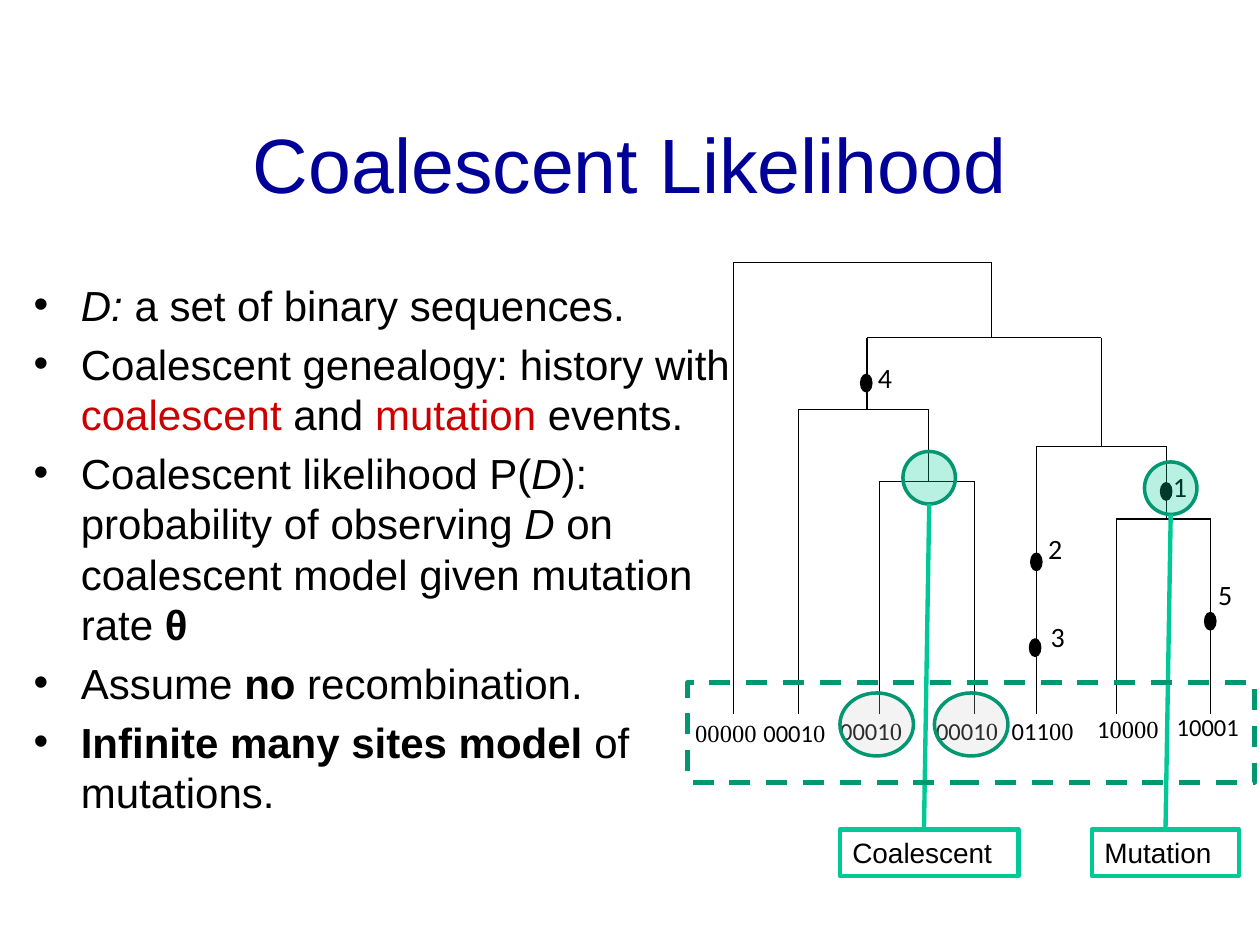
from lxml import etree
from pptx import Presentation
from pptx.dml.color import RGBColor
from pptx.enum.dml import MSO_LINE
from pptx.enum.shapes import MSO_CONNECTOR, MSO_SHAPE
from pptx.enum.text import MSO_ANCHOR, MSO_AUTO_SIZE, PP_ALIGN
from pptx.oxml.ns import qn
from pptx.util import Pt

STRAIGHT = MSO_CONNECTOR.STRAIGHT
OVAL = MSO_SHAPE.OVAL
RECTANGLE = MSO_SHAPE.RECTANGLE
DASH = MSO_LINE.DASH
TOP, MIDDLE = MSO_ANCHOR.TOP, MSO_ANCHOR.MIDDLE
LEFT, CENTER = PP_ALIGN.LEFT, PP_ALIGN.CENTER
NO_AUTOFIT = MSO_AUTO_SIZE.NONE
TOP_SITE = 0

COLORS = {
    "title": "000099",
    "ink": "000000",
    "accent": "CC0000",
    "event": "00CC99",
    "pointer": "00C896",
    "outline": "009771",
    "sample": "CCCCCC",
}

BULLETS = [
    [("D: ", "i"), ("a set of binary sequences.", "")],
    [("Coalescent genealogy: history with ", ""), ("coalescent", "accent"),
     (" and ", ""), ("mutation", "accent"), (" events.", "")],
    [("Coalescent likelihood P(", ""), ("D", "i"),
     ("): probability of observing ", ""), ("D", "i"),
     (" on coalescent model given mutation rate ", ""), ("θ", "b")],
    [("Assume ", ""), ("no", "b"), (" recombination.", "")],
    [("Infinite many sites model ", "b"), ("of mutations.", "")],
]

LEAF_Y = 258
# left x, right x, bar y, left branch end, right branch end
FORKS = [
    (29, 176.6, 0, LEAF_Y, 43),
    (105.4, 239.3, 43, 84, 105),
    (66.2, 140.6, 84, LEAF_Y, 125),
    (112.6, 167, 125, LEAF_Y, LEAF_Y),
    (202.4, 276.7, 105, LEAF_Y, 146.6),
    (248, 301.9, 146.6, LEAF_Y, LEAF_Y),
]
# label, dot centre, label corner
MUTATIONS = [
    ("4", (105, 68.9), (104.6, 52.3)),
    ("1", (276.4, 130.8), (273.1, 115)),
    ("5", (301.6, 205), (299, 176.2)),
    ("2", (202.2, 171.1), (201.8, 150.2)),
    ("3", (201.5, 220.1), (203.3, 200.6)),
]
# Calibri part, Times New Roman part, corner
SEQUENCES = [
    ("", "00000", (0.2, 256.8)),
    ("0001", "0", (39.1, 256.8)),
    ("0001", "0", (83, 255.4)),
    ("0001", "0", (137.8, 255.4)),
    ("011", "00", (181, 255.4)),
    ("1", "0000", (229.9, 254.6)),
    ("10001", "", (275.3, 253.2)),
]


def rgb(name):
    return RGBColor.from_string(COLORS[name])


def add_run(paragraph, text, size, font="Arial", color="ink"):
    run = paragraph.add_run()
    run.text = text
    run.font.size = Pt(size)
    run.font.name = font
    run.font.color.rgb = rgb(color)
    return run


def add_line(shapes, start, end, color="ink", width=0.75):
    line = shapes.add_connector(STRAIGHT, *map(Pt, start + end))
    line.line.color.rgb = rgb(color)
    line.line.width = Pt(width)
    etree.SubElement(line._element.spPr, qn("a:effectLst"))
    return line


def add_outline(shapes, kind, box, color, width, fill=None, opacity=100):
    shape = shapes.add_shape(kind, *map(Pt, box))
    shape.shadow.inherit = False
    shape.line.color.rgb = rgb(color)
    shape.line.width = Pt(width)
    if fill is None:
        shape.fill.background()
    else:
        shape.fill.solid()
        shape.fill.fore_color.rgb = rgb(fill)
        if opacity < 100:
            hue = shape._element.spPr.find(".//" + qn("a:solidFill"))[0]
            etree.SubElement(hue, qn("a:alpha"), val=str(opacity * 1000))
    return shape


def add_label(shapes, corner, size, runs):
    label = shapes.add_textbox(*map(Pt, corner + (54, 40)))
    label.text_frame.word_wrap = True
    paragraph = label.text_frame.paragraphs[0]
    paragraph.space_after = Pt(10)
    for text, font in runs:
        if text:
            add_run(paragraph, text, size, font)


def place(placeholder, box):
    placeholder.left, placeholder.top, placeholder.width, placeholder.height = map(Pt, box)
    placeholder.text_frame.auto_size = NO_AUTOFIT


def fill_title(title, box):
    place(title, box)
    title.text_frame.vertical_anchor = MIDDLE
    paragraph = title.text_frame.paragraphs[0]
    paragraph.alignment = CENTER
    add_run(paragraph, "Coalescent Likelihood", 44, color="title")


def fill_body(body, box):
    place(body, box)
    frame = body.text_frame
    for index, runs in enumerate(BULLETS):
        paragraph = frame.add_paragraph() if index else frame.paragraphs[0]
        for text, style in runs:
            run = add_run(paragraph, text, 24, color="accent" if style == "accent" else "ink")
            if style == "i":
                run.font.italic = True
            elif style == "b":
                run.font.bold = True


def draw_genealogy(slide, left, top):
    shapes = slide.shapes.add_group_shape().shapes

    def at(x, y):
        return left + x, top + y

    for corner_x, far_x, bar_y, corner_end, far_end in FORKS:
        add_line(shapes, at(corner_x, bar_y), at(far_x, bar_y))
        add_line(shapes, at(corner_x, bar_y), at(corner_x, corner_end))
        add_line(shapes, at(far_x, bar_y), at(far_x, far_end))
    for calibri, times, corner in SEQUENCES:
        add_label(shapes, at(*corner), 14, [(calibri, "Calibri"), (times, "Times New Roman")])
    dot_width, dot_height = 6.5, 10
    for number, (x, y), corner in MUTATIONS:
        dot = at(x - dot_width / 2, y - dot_height / 2) + (dot_width, dot_height)
        add_outline(shapes, OVAL, dot, "ink", 0.75, "ink")
        add_label(shapes, at(*corner), 16, [(number, "Calibri")])


def draw_callout(slide, name, ring_corner, box, pointer_x, centered):
    shapes = slide.shapes.add_group_shape().shapes
    ring = 30
    x, y = ring_corner
    add_outline(shapes, OVAL, (x, y, ring, ring), "outline", 2, "event", 28)
    pointer = add_line(shapes, (x + ring / 2, y + ring), (pointer_x, box[1]), "pointer", 2.5)
    caption = add_outline(shapes, RECTANGLE, box, "pointer", 2.5)
    if centered:
        pointer.end_connect(caption, TOP_SITE)
    caption.text_frame.word_wrap = True
    caption.text_frame.vertical_anchor = TOP
    paragraph = caption.text_frame.paragraphs[0]
    paragraph.alignment = LEFT
    add_run(paragraph, name, 16)


def draw_sample_frame(slide, left, top, width, height):
    pair = slide.shapes.add_group_shape().shapes
    for offset in (87, 141):
        add_outline(pair, OVAL, (left + offset, top + 6, 42, 36), "outline", 2, "sample", 22)
    frame = add_outline(slide.shapes, RECTANGLE, (left, top, width, height), "outline", 3)
    frame.line.dash_style = DASH


def main():
    deck = Presentation()
    deck.slide_width, deck.slide_height = Pt(720), Pt(540)
    slide = deck.slides.add_slide(deck.slide_layouts[1])
    fill_title(slide.shapes.title, (54, 48, 612, 90))
    fill_body(slide.placeholders[1], (12, 156, 414, 330))
    draw_genealogy(slide, 390, 150)
    draw_callout(slide, "Coalescent", (516, 258), (480, 474, 102, 26.6), 528, False)
    draw_callout(slide, "Mutation", (654, 264), (624, 474, 84, 26.6), 666, True)
    draw_sample_frame(slide, 393, 390, 324, 57)
    deck.save("out.pptx")


if __name__ == "__main__":
    main()
